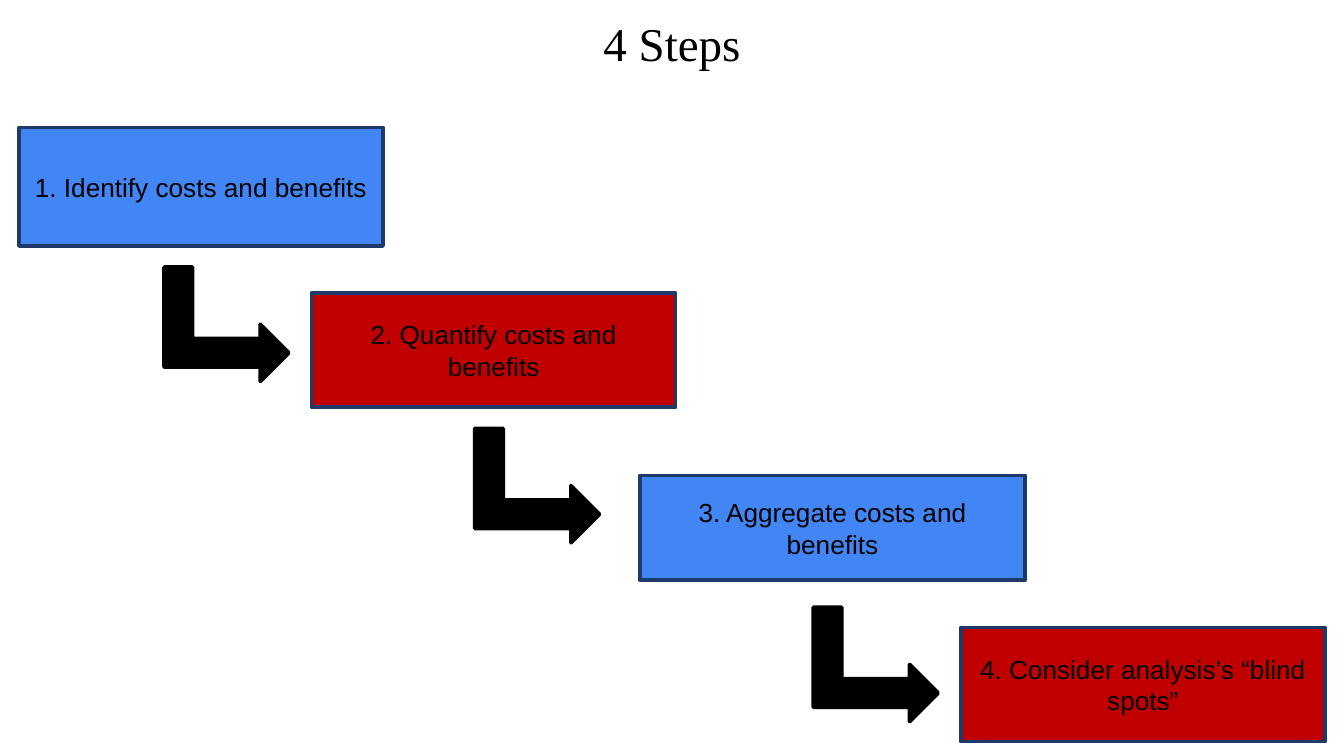
from typing import NamedTuple

from pptx import Presentation
from pptx.dml.color import RGBColor
from pptx.enum.shapes import MSO_SHAPE
from pptx.enum.text import MSO_ANCHOR, PP_ALIGN
from pptx.shapes.autoshape import Shape
from pptx.slide import Slide
from pptx.text.text import TextFrame
from pptx.util import Cm, Pt

BLACK = RGBColor(0x00, 0x00, 0x00)
BLUE = RGBColor(0x42, 0x85, 0xF4)
RED = RGBColor(0xC0, 0x00, 0x00)
NAVY = RGBColor(0x1D, 0x3A, 0x6B)

ARROW_WIDTH, ARROW_HEIGHT = 2.16, 2.36


class Step(NamedTuple):
    """A step box, in centimetres."""
    text: str
    left: float
    top: float
    width: float
    height: float
    fill: RGBColor


class Turn(NamedTuple):
    """Top left corner of an arrow's frame before rotation, in centimetres."""
    left: float
    top: float


STEPS = [
    Step("1. Identify costs and benefits", 0.36, 2.41, 6.88, 2.24, BLUE),
    Step("2. Quantify costs and benefits", 5.89, 5.54, 6.88, 2.16, RED),
    Step("3. Aggregate costs and benefits", 12.09, 8.99, 7.29, 1.98, BLUE),
    Step("4. Consider analysis’s “blind spots”", 18.16, 11.86, 6.88, 2.16, RED),
]
TURNS = [Turn(3.2, 4.95), Turn(9.07, 8), Turn(15.47, 11.38)]


def write(frame: TextFrame, text: str, font_name: str, size: float) -> None:
    frame.word_wrap = True
    para = frame.paragraphs[0]
    para.text = text
    para.alignment = PP_ALIGN.CENTER
    para.font.name = font_name
    para.font.size = Pt(size)
    para.font.color.rgb = BLACK


def paint(shape: Shape, fill: RGBColor, line: RGBColor) -> None:
    shape.shadow.inherit = False
    shape.fill.solid()
    shape.fill.fore_color.rgb = fill
    shape.line.color.rgb = line
    shape.line.width = Pt(2)


def draw_title(page: Slide, text: str) -> None:
    box = page.shapes.add_textbox(Cm(0), Cm(0.03), Cm(25.4), Cm(1.6))
    frame = box.text_frame
    frame.margin_top = frame.margin_bottom = Cm(0.25)
    write(frame, text, "Times New Roman", 25.2)


def draw_step(page: Slide, step: Step) -> None:
    box = page.shapes.add_shape(MSO_SHAPE.RECTANGLE, Cm(step.left), Cm(step.top),
                                Cm(step.width), Cm(step.height))
    paint(box, step.fill, NAVY)
    box.text_frame.vertical_anchor = MSO_ANCHOR.MIDDLE
    write(box.text_frame, step.text, "Arial", 14)


def draw_turn(page: Slide, turn: Turn) -> None:
    arrow = page.shapes.add_shape(MSO_SHAPE.BENT_UP_ARROW, Cm(turn.left), Cm(turn.top),
                                  Cm(ARROW_WIDTH), Cm(ARROW_HEIGHT))
    arrow.rotation = 90
    paint(arrow, BLACK, BLACK)


def main() -> None:
    deck = Presentation()
    deck.slide_width, deck.slide_height = Cm(25.4), Cm(14.29)
    page = deck.slides.add_slide(deck.slide_layouts[6])

    # Heading
    draw_title(page, "4 Steps")

    # Staircase of steps and the arrows between them
    for step in STEPS:
        draw_step(page, step)
    for turn in TURNS:
        draw_turn(page, turn)

    deck.save("out.pptx")


if __name__ == "__main__":
    main()
